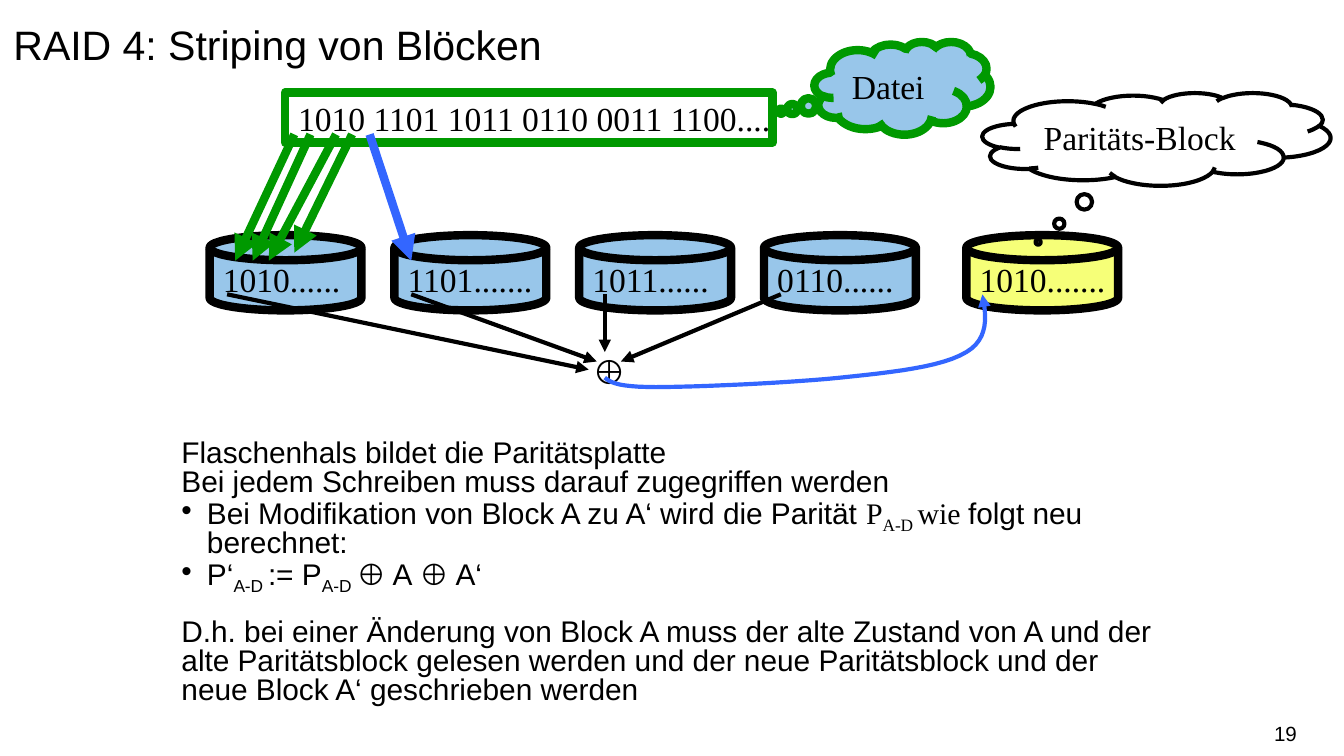
from dataclasses import dataclass

from lxml import etree
from pptx import Presentation
from pptx import util as u
from pptx.dml.color import RGBColor
from pptx.enum import shapes, text
from pptx.oxml import ns


@dataclass(frozen=True)
class Theme:
    """Colours, fonts and type sizes of the deck."""
    black: str = "000000"
    white: str = "FFFFFF"
    green: str = "009900"
    blue: str = "3366FF"
    disk: str = "98C6EA"
    parity: str = "F6FF78"
    sans: str = "Arial"
    serif: str = "Times New Roman"
    title: float = 22
    label: float = 18
    body: float = 16
    number: float = 11
    thick: float = 4.5
    thin: float = 2.25


@dataclass(frozen=True)
class Box:
    """A region in inches."""
    left: float
    top: float
    width: float
    height: float

    def inner(self, left, top, width, height):
        """Return a box placed relative to this one."""
        return Box(self.left + left, self.top + top, width, height)

    def point(self, x, y):
        """Return a relative point as absolute lengths."""
        return u.Inches(self.left + x), u.Inches(self.top + y)

    def frame(self):
        """Return position and size as lengths."""
        return tuple(u.Inches(v) for v in (self.left, self.top, self.width, self.height))


THEME = Theme()
SHAPE = shapes.MSO_SHAPE


def add_span(para, words, size, face, baseline=0):
    """Add one formatted run to a paragraph."""
    span = para.add_run()
    span.text = words
    span.font.size = u.Pt(size)
    span.font.name = face
    span.font.color.rgb = RGBColor.from_string(THEME.black)
    if baseline:
        span.font._element.set("baseline", str(baseline * 1000))


def set_line(item, color, width, arrow=False):
    """Style an outline and optionally end it in an arrowhead."""
    item.line.color.rgb = RGBColor.from_string(color)
    item.line.width = u.Pt(width)
    if arrow:
        etree.SubElement(item.line._get_or_add_ln(), ns.qn("a:tailEnd"), type="triangle")


def add_label(page, kind, box, words, fill, line, width, wrap=False):
    """Add a preset shape with a left-aligned label."""
    shape = page.shapes.add_shape(kind, *box.frame())
    shape.shadow.inherit = False
    if fill:
        shape.fill.solid()
        shape.fill.fore_color.rgb = RGBColor.from_string(fill)
    else:
        shape.fill.background()
    set_line(shape, line, width)
    frame = shape.text_frame
    frame.word_wrap = wrap
    frame.vertical_anchor = text.MSO_ANCHOR.MIDDLE
    para = frame.paragraphs[0]
    para.alignment = text.PP_ALIGN.LEFT
    add_span(para, words, THEME.label, THEME.serif)
    return shape


def add_arrow(page, box, start, end, color, width):
    """Add a straight arrow between two relative points."""
    arrow = page.shapes.add_connector(
        shapes.MSO_CONNECTOR.STRAIGHT, *box.point(*start), *box.point(*end))
    set_line(arrow, color, width, arrow=True)
    etree.SubElement(arrow._element.spPr, ns.qn("a:effectLst"))


def add_curve(page, box, start, bends, color, width):
    """Add an arrow along joined cubic curves."""
    points = []
    first = start
    for bend in bends:
        knots = (first, *bend)
        for step in range(1, 13):
            t = step / 12
            weights = ((1 - t) ** 3, 3 * t * (1 - t) ** 2, 3 * t * t * (1 - t), t ** 3)
            points.append(box.point(*(
                sum(w * knot[axis] for w, knot in zip(weights, knots)) for axis in (0, 1))))
        first = bend[-1]
    builder = page.shapes.build_freeform(*box.point(*start))
    builder.add_line_segments(points, close=False)
    curve = builder.convert_to_shape()
    curve.shadow.inherit = False
    curve.fill.background()
    set_line(curve, color, width, arrow=True)


def place_title(page, box):
    """Fill the title placeholder."""
    title = page.shapes.title
    title.left, title.top, title.width, title.height = box.frame()
    frame = title.text_frame
    frame.word_wrap = True
    frame.auto_size = text.MSO_AUTO_SIZE.NONE
    frame.vertical_anchor = text.MSO_ANCHOR.TOP
    para = frame.paragraphs[0]
    para.alignment = text.PP_ALIGN.LEFT
    para.line_spacing = 1.25
    add_span(para, "RAID 4: Striping von Blöcken", THEME.title, THEME.sans)


def place_body(page, box):
    """Fill the body placeholder with plain and bulleted paragraphs."""
    sans, serif = THEME.sans, THEME.serif
    content = (
        (False, 0, [("Flaschenhals bildet die Paritätsplatte", sans, 0)]),
        (False, 0, [("Bei jedem Schreiben muss darauf zugegriffen werden", sans, 0)]),
        (True, 0, [("Bei Modifikation von Block A zu A‘ wird die Parität ", sans, 0),
                   ("P", serif, 0), ("A-D ", serif, -25), ("wie ", serif, 0),
                   ("folgt neu berechnet:", sans, 0)]),
        (True, 0, [("P‘", sans, 0), ("A-D ", sans, -25), (":= P", sans, 0),
                   ("A-D ", sans, -25), ("⊕ A ⊕ A‘", sans, 0)]),
        (False, 15, [("D.h. bei einer Änderung von Block A muss der alte Zustand von A "
                      "und der alte Paritätsblock gelesen werden und der neue "
                      "Paritätsblock und der neue Block A‘ geschrieben werden", sans, 0)]),
    )
    body = page.placeholders[1]
    body.left, body.top, body.width, body.height = box.frame()
    frame = body.text_frame
    frame.word_wrap = True
    frame.auto_size = text.MSO_AUTO_SIZE.NONE
    frame.vertical_anchor = text.MSO_ANCHOR.TOP
    for index, (bulleted, gap, spans) in enumerate(content):
        para = frame.add_paragraph() if index else frame.paragraphs[0]
        para.level = int(bulleted)
        para.alignment = text.PP_ALIGN.LEFT
        para.line_spacing = 0.8
        para.space_before = u.Pt(gap)
        props = para._p.get_or_add_pPr()
        indent = u.Inches(0.19) if bulleted else 0
        props.set("marL", str(indent))
        props.set("indent", str(-indent))
        if bulleted:
            etree.SubElement(props, ns.qn("a:buChar"), char="•")
        else:
            etree.SubElement(props, ns.qn("a:buNone"))
        for words, face, baseline in spans:
            add_span(para, words, THEME.body, face, baseline)


def place_striping(page, box):
    """Draw the file, the disks and the arrows that spread its blocks."""
    add_label(page, SHAPE.RECTANGLE, box.inner(0.56, 0, 3.63, 0.37),
              "1010 1101 1011 0110 0011 1100....", None, THEME.green, THEME.thick)
    blocks = ("1010......", "1101.......", "1011......", "0110......", "1010.......")
    lefts = [1.375 * column for column in range(4)] + [5.63]
    fills = [THEME.disk] * 4 + [THEME.parity]
    for left, words, fill in zip(lefts, blocks, fills):
        add_label(page, SHAPE.FLOWCHART_MAGNETIC_DISK, box.inner(left, 1.06, 1.13, 0.56),
                  words, fill, THEME.black, THEME.thick)
    for start, end, drop in ((0.63, 0.19, 1.25), (0.75, 0.32, 1.25), (0.94, 0.44, 1.25),
                             (1.06, 0.63, 1.19)):
        add_arrow(page, box, (start, 0.31), (end, drop), THEME.green, THEME.thick)
    add_arrow(page, box, (1.19, 0.31), (1.5, 1.25), THEME.blue, THEME.thick)


def place_parity(page, box):
    """Draw the combination of the blocks into the parity block."""
    symbol = page.shapes.add_textbox(*box.inner(2.62, 0.37, 0.44, 0.4).frame())
    symbol.text_frame.word_wrap = True
    add_span(symbol.text_frame.paragraphs[0], "⊕", THEME.label, THEME.serif)
    for start, end in ((0, (2.69, 0.56)), (1.37, (2.75, 0.5)), (2.81, (2.81, 0.43)),
                       (4.12, (2.93, 0.5))):
        add_arrow(page, box, (start, 0), end, THEME.black, THEME.thin)
    add_curve(page, box, (2.81, 0.62), (
        ((2.85, 0.65), (2.89, 0.69), (3.19, 0.69)),
        ((3.48, 0.69), (4.17, 0.66), (4.56, 0.62)),
        ((4.95, 0.58), (5.32, 0.54), (5.5, 0.43)),
        ((5.67, 0.33), (5.65, 0.16), (5.62, 0)),
    ), THEME.blue, THEME.thin)


def place_cloud(page, box, words, tip, fill, line, width):
    """Draw a thought cloud whose bubbles lead to the tip."""
    cloud = add_label(page, SHAPE.CLOUD_CALLOUT, box, words, fill, line, width, wrap=True)
    cloud.adjustments[0], cloud.adjustments[1] = tip


def place_number(page, box):
    """Write the page number."""
    frame = page.shapes.add_textbox(*box.frame()).text_frame
    frame.word_wrap = True
    frame.margin_left = frame.margin_right = 0
    frame.vertical_anchor = text.MSO_ANCHOR.MIDDLE
    para = frame.paragraphs[0]
    para.alignment = text.PP_ALIGN.RIGHT
    add_span(para, "19", THEME.number, THEME.sans)


def main():
    """Build and save the deck."""
    deck = Presentation()
    deck.slide_width, deck.slide_height = u.Inches(10), u.Inches(10 * 9 / 16)
    page = deck.slides.add_slide(deck.slide_layouts[1])
    place_title(page, Box(0, 0, 10, 0.94))
    place_body(page, Box(1.25, 3.23, 7.5, 2.11))
    place_striping(page, Box(1.56, 0.69, 6.75, 1.62))
    place_parity(page, Box(1.69, 2.19, 5.67, 0.77))
    place_cloud(page, Box(6.06, 0.31, 1.31, 0.69), "Datei", (-0.69, 0.25),
                THEME.disk, THEME.green, THEME.thick)
    place_cloud(page, Box(7.31, 0.69, 2.59, 0.69), "Paritäts-Block", (-0.34, 1.11),
                THEME.white, THEME.black, THEME.thin)
    place_number(page, Box(7.41, 5.31, 2.24, 0.3))
    deck.save("out.pptx")


if __name__ == "__main__":
    main()
